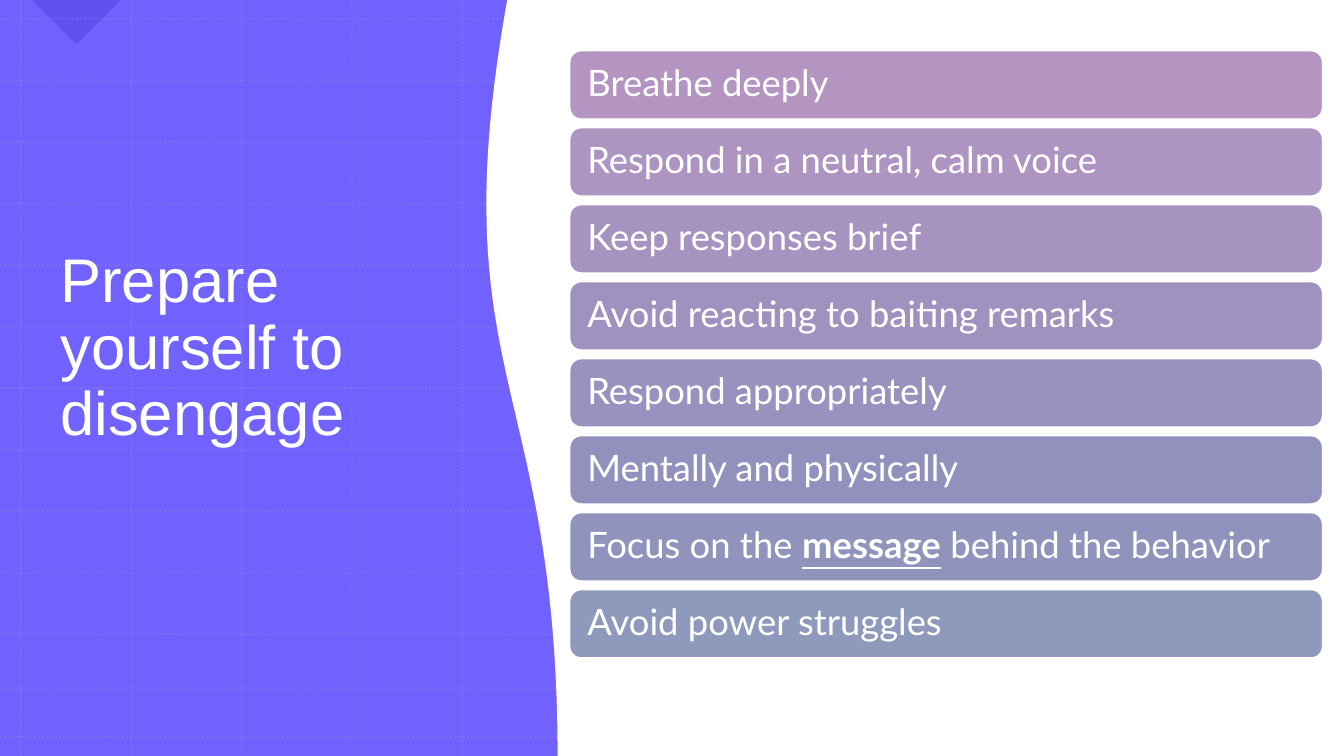
from dataclasses import dataclass

from lxml import etree
from pptx import Presentation
from pptx.dml.color import RGBColor
from pptx.enum.dml import MSO_LINE
from pptx.enum.shapes import MSO_CONNECTOR, MSO_SHAPE
from pptx.enum.text import MSO_ANCHOR, PP_ALIGN
from pptx.oxml.ns import qn
from pptx.util import Cm, Pt

RECTANGLE = MSO_SHAPE.RECTANGLE
RIGHT_TRIANGLE = MSO_SHAPE.RIGHT_TRIANGLE
ROUNDED = MSO_SHAPE.ROUNDED_RECTANGLE
STRAIGHT = MSO_CONNECTOR.STRAIGHT
DOTTED = MSO_LINE.ROUND_DOT
MIDDLE = MSO_ANCHOR.MIDDLE
LEFT = PP_ALIGN.LEFT

PAGE_WIDTH, PAGE_HEIGHT = 33.87, 19.05
WHITE, VIOLET, INDIGO, MAUVE = "FFFFFF", "7162FE", "1201AF", "B495C2"

GRID_COLUMNS = [0.53 + 2.78 * column for column in range(5)]
GRID_ROWS = [0.48 + 1.55 * row for row in range(11)] + [17.35, 18.57]

# Bezier points of the wave, from the bottom edge to the top edge
WAVE = [(14.07, 19.05), (14.07, 9.55), (11.1, 9.5), (12.8, 0)]
WAVE_STEPS = 48

BAR_LEFT, BAR_TOP, BAR_WIDTH, BAR_HEIGHT = 14.36, 1.28, 18.97, 1.72
BAR_PITCH = 1.94


@dataclass
class Tip:
    text: str
    color: str
    stressed: str = ""


TIPS = [
    Tip("Breathe deeply", MAUVE),
    Tip("Respond in a neutral, calm voice", "AD94C1"),
    Tip("Keep responses brief", "A693C0"),
    Tip("Avoid reacting to baiting remarks", "A092BF"),
    Tip("Respond appropriately", "9992BE"),
    Tip("Mentally and physically", "9291BD"),
    Tip("Focus on the message behind the behavior", "9094BC", "message"),
    Tip("Avoid power struggles", "8F99BB"),
]


def rgb(color: str) -> RGBColor:
    return RGBColor.from_string(color)


def set_opacity(element, percent: int) -> None:
    """Make the colour inside the given XML element partly transparent."""
    color = next(element.iter(qn("a:srgbClr")))
    etree.SubElement(color, qn("a:alpha")).set("val", str(percent * 1000))


def paint(shape, fill: str, outline: str = "") -> None:
    shape.shadow.inherit = False
    shape.fill.solid()
    shape.fill.fore_color.rgb = rgb(fill)
    if outline:
        shape.line.color.rgb = rgb(outline)
        shape.line.width = Pt(1)
    else:
        shape.line.fill.background()


def style_paragraph(para, font: str, size: int) -> None:
    para.alignment = LEFT
    para.line_spacing = 0.9
    para.font.name = font
    para.font.size = Pt(size)
    para.font.color.rgb = rgb(WHITE)


def draw_grid_line(page, x1: float, y1: float, x2: float, y2: float) -> None:
    line = page.shapes.add_connector(STRAIGHT, Cm(x1), Cm(y1), Cm(x2), Cm(y2))
    line.line.color.rgb = rgb(MAUVE)
    line.line.width = Pt(1.5)
    line.line.dash_style = DOTTED
    properties = line._element.spPr
    set_opacity(properties, 20)
    etree.SubElement(properties, qn("a:effectLst"))


def draw_backdrop(page) -> None:
    backdrop = page.shapes.add_shape(RECTANGLE, 0, 0, Cm(PAGE_WIDTH), Cm(PAGE_HEIGHT))
    paint(backdrop, VIOLET)
    corner = page.shapes.add_shape(RIGHT_TRIANGLE, Cm(1.14), Cm(-0.79), Cm(1.58), Cm(1.58))
    corner.rotation = 315
    paint(corner, INDIGO)
    set_opacity(corner._element.spPr, 17)
    for x in GRID_COLUMNS:
        draw_grid_line(page, x, 0, x, PAGE_HEIGHT)
    for y in GRID_ROWS:
        draw_grid_line(page, 0, y, PAGE_WIDTH, y)


def wave_point(t: float) -> tuple[int, int]:
    """Return the point of the cubic Bezier wave at t, from 0 to 1."""
    weights = [(1 - t) ** 3, 3 * t * (1 - t) ** 2, 3 * t**2 * (1 - t), t**3]
    x = sum(weight * point[0] for weight, point in zip(weights, WAVE))
    y = sum(weight * point[1] for weight, point in zip(weights, WAVE))
    return Cm(x), Cm(y)


def draw_wave_panel(page) -> None:
    points = [wave_point(step / WAVE_STEPS) for step in range(WAVE_STEPS + 1)]
    builder = page.shapes.build_freeform(Cm(PAGE_WIDTH), Cm(PAGE_HEIGHT))
    builder.add_line_segments(points + [(Cm(PAGE_WIDTH), 0)], close=True)
    paint(builder.convert_to_shape(), WHITE, WHITE)


def draw_title(page) -> None:
    box = page.shapes.add_textbox(Cm(1.27), Cm(2), Cm(10.36), Cm(13.6))
    frame = box.text_frame
    frame.word_wrap = True
    frame.vertical_anchor = MIDDLE
    para = frame.paragraphs[0]
    para.text = "Prepare yourself to disengage"
    style_paragraph(para, "Arial", 44)


def draw_tip(page, tip: Tip, top: float) -> None:
    bar = page.shapes.add_shape(
        ROUNDED, Cm(BAR_LEFT), Cm(top), Cm(BAR_WIDTH), Cm(BAR_HEIGHT)
    )
    paint(bar, tip.color, WHITE)
    frame = bar.text_frame
    frame.word_wrap = True
    frame.vertical_anchor = MIDDLE
    frame.margin_left = frame.margin_right = Cm(0.36)
    para = frame.paragraphs[0]
    style_paragraph(para, "Lato", 26)
    pieces = tip.text.partition(tip.stressed) if tip.stressed else [tip.text]
    for piece in pieces:
        span = para.add_run()
        span.text = piece
        if piece == tip.stressed:
            span.font.bold = True
            span.font.underline = True


def main() -> None:
    deck = Presentation()
    deck.slide_width, deck.slide_height = Cm(PAGE_WIDTH), Cm(PAGE_HEIGHT)
    page = deck.slides.add_slide(deck.slide_layouts[6])
    draw_backdrop(page)
    draw_title(page)
    draw_wave_panel(page)
    for index, tip in enumerate(TIPS):
        draw_tip(page, tip, BAR_TOP + index * BAR_PITCH)
    deck.save("out.pptx")


if __name__ == "__main__":
    main()
